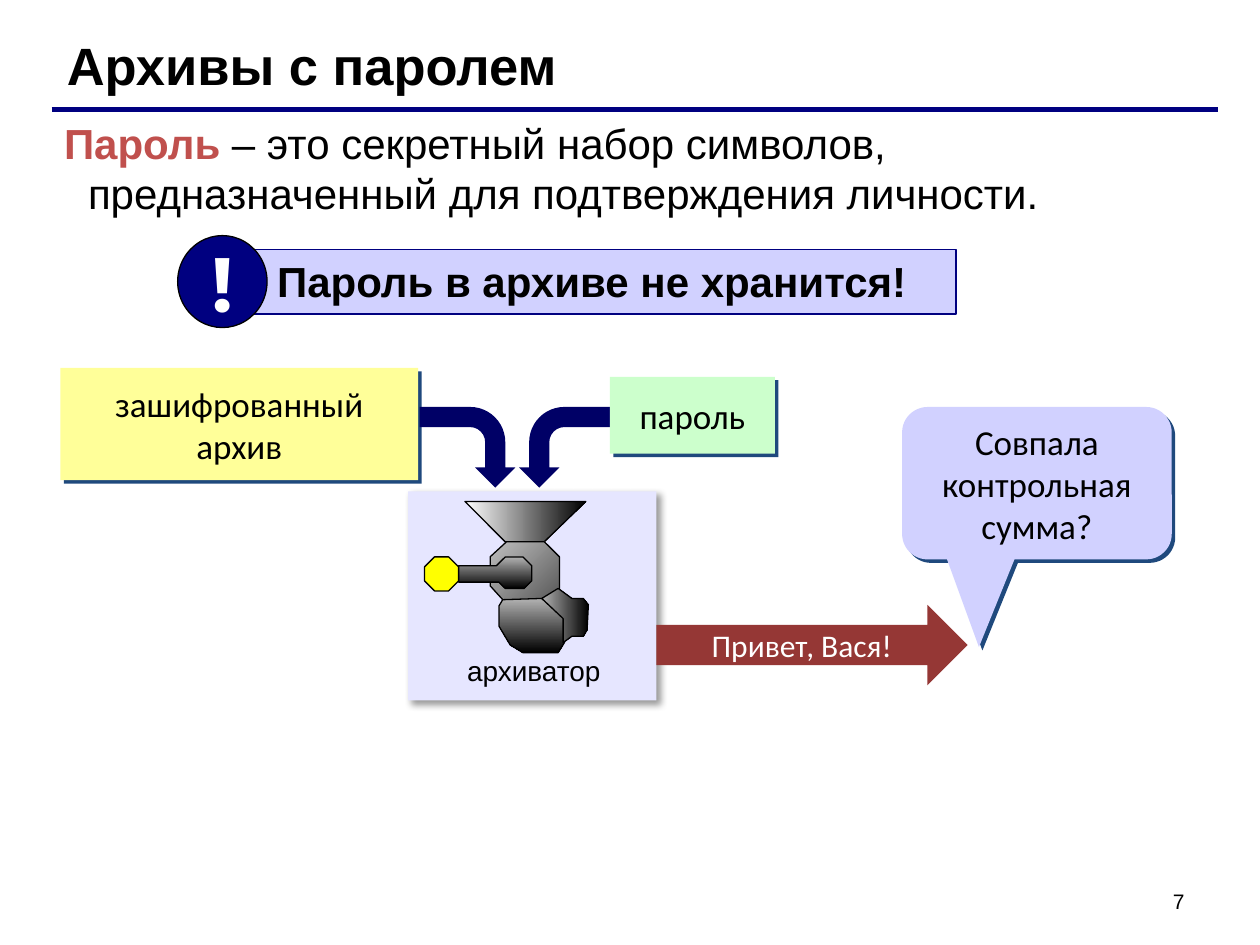
import pptx
import pptx.util
import pptx.dml.color
import pptx.enum.shapes
import pptx.enum.text
import pptx.oxml.ns
import lxml.etree

COLS, ROWS = 1000, 750
WIDE, HIGH = pptx.util.Inches(10), pptx.util.Inches(7.5)
UNIT = WIDE / COLS
KIND = pptx.enum.shapes.MSO_SHAPE
ALIGN = pptx.enum.text.PP_ALIGN
ANCHOR = pptx.enum.text.MSO_ANCHOR
NAVY, BLACK, WHITE, LILAC = "000080", "000000", "FFFFFF", "D1D1FF"
HARD = ("1F497D", 100, 0, 2.8)
SOFT = (BLACK, 40, 4, 3)


def color(text):
    return pptx.dml.color.RGBColor.from_string(text)


def col(num):
    return int(WIDE * num / COLS)


def row(num):
    return int(HIGH * num / ROWS)


def grid(left, top, wide, high):
    return col(left), row(top), col(wide), row(high)


def tag(root, name, **attrs):
    return lxml.etree.SubElement(root, pptx.oxml.ns.qn(name), attrs)


def shade(shape, tone, alpha, blur, dist):
    root = shape._element.spPr.find(pptx.oxml.ns.qn("a:effectLst"))
    outer = tag(root, "a:outerShdw", blurRad=str(int(blur * 12700)),
                dist=str(int(dist * 12700)), dir="2700000", algn="tl", rotWithShape="0")
    tag(tag(outer, "a:srgbClr", val=tone), "a:alpha", val=str(alpha * 1000))


def paint(shape, fill, line=None, width=0.75):
    shape.shadow.inherit = False
    if isinstance(fill, tuple):
        start, end, angle = fill
        shape.fill.gradient()
        shape.fill.gradient_angle = -angle % 360
        for stop, tone in zip(shape.fill.gradient_stops, (start, end)):
            stop.color.rgb = color(tone)
    else:
        shape.fill.solid()
        shape.fill.fore_color.rgb = color(fill)
    if line:
        shape.line.color.rgb = color(line)
        shape.line.width = pptx.util.Pt(width)
    else:
        shape.line.fill.background()


def style(font, size, face="Arial", tone=BLACK, bold=False):
    font.size, font.name, font.bold = pptx.util.Pt(size), face, bold
    font.color.rgb = color(tone)


def write(shape, text, size, face="Arial", tone=BLACK, bold=False,
          align=ALIGN.LEFT, anchor=ANCHOR.TOP, wrap=True):
    frame = shape.text_frame
    frame.text = text
    frame.word_wrap = wrap
    frame.auto_size = pptx.enum.text.MSO_AUTO_SIZE.NONE
    frame.vertical_anchor = anchor
    for para in frame.paragraphs:
        para.alignment = align
        style(para.font, size, face, tone, bold)
    return frame


def center(shape, text, size, face="Calibri", tone=BLACK, bold=False, wrap=True):
    write(shape, text, size, face, tone, bold, ALIGN.CENTER, ANCHOR.MIDDLE, wrap)


def label(slide, place, text, size, **opts):
    return write(slide.shapes.add_textbox(*grid(*place)), text, size, **opts)


def block(slide, kind, place, fill, line=None, width=0.75, shadow=None):
    shape = slide.shapes.add_shape(kind, *grid(*place))
    paint(shape, fill, line, width)
    if shadow:
        shade(shape, *shadow)
    return shape


def part(slide, points, fill):
    form = slide.shapes.build_freeform(*points[0], scale=UNIT)
    form.add_line_segments(points[1:], close=True)
    paint(form.convert_to_shape(), fill, BLACK)


def bend(slide, left, angle, flip=False):
    arrow = block(slide, KIND.BENT_ARROW, (left, 317, 64, 76), "000066")
    arrow.rotation = angle
    if flip:
        arrow._element.spPr.xfrm.set("flipH", "1")


def head(slide):
    rule = slide.shapes.add_connector(pptx.enum.shapes.MSO_CONNECTOR.STRAIGHT,
                                      col(41), row(87), col(967), row(87))
    rule.line.color.rgb = color(NAVY)
    rule.line.width = pptx.util.Pt(3)
    tag(rule._element.spPr, "a:effectLst")
    title = slide.shapes.title
    title.left, title.top, title.width, title.height = grid(43, 21, 890, 60)
    write(title, "Архивы с паролем", 30, bold=True)
    label(slide, (717, 695, 233, 40), "7", 12, align=ALIGN.RIGHT, anchor=ANCHOR.MIDDLE)


def define(slide):
    frame = label(slide, (41, 88, 921, 91), "", 24)
    para = frame.paragraphs[0]
    props = para._p.get_or_add_pPr()
    props.set("marL", str(col(19)))
    props.set("indent", str(-col(19)))
    term = para.add_run()
    term.text = "Пароль"
    style(term.font, 24, tone="C0504D", bold=True)
    para.add_run().text = " – это секретный набор символов, предназначенный для подтверждения личности."


def warn(slide):
    bar = block(slide, KIND.RECTANGLE, (192, 198, 567, 51), LILAC, NAVY, 1)
    write(bar, "Пароль в архиве не хранится!", 24, bold=True).margin_left = col(28)
    mark = block(slide, KIND.OVAL, (141, 187, 71, 73), NAVY, BLACK)
    center(mark, "!", 44, "Montserrat", WHITE, True, False)


def mill(slide):
    block(slide, KIND.RECTANGLE, (324, 390, 197, 166), "E6E6FF", shadow=SOFT)
    part(slide, [(369, 398), (465, 398), (432, 430), (401, 430)], (WHITE, BLACK, 0))
    part(slide, [(402, 430), (432, 430), (444, 442), (444, 467), (429, 476),
                 (399, 476), (389, 465), (389, 442)], ("C0C0C0", "595959", 45))
    part(slide, [(399, 476), (396, 481), (396, 497), (405, 512), (415, 518),
                 (443, 518), (448, 510), (448, 490), (430, 475)], ("B2B2B2", BLACK, 90))
    part(slide, [(447, 510), (454, 505), (463, 505), (466, 500), (467, 480), (463, 475),
                 (454, 475), (443, 467), (430, 475), (447, 491)], ("B2B2B2", BLACK, 0))
    block(slide, KIND.OCTAGON, (337, 442, 27, 27), "FFFF00", BLACK)
    part(slide, [(364, 449), (394, 449), (401, 442), (415, 442), (422, 449),
                 (422, 461), (416, 467), (401, 467), (396, 462), (364, 462)],
         ("B2B2B2", BLACK, 90))
    label(slide, (361, 514, 127, 37), "архиватор", 16, wrap=False)


def flow(slide):
    source = block(slide, KIND.RECTANGLE, (48, 292, 284, 89), "FFFF99", shadow=HARD)
    center(source, "зашифрованный\nархив", 20, wrap=False)
    mill(slide)
    result = block(slide, KIND.RIGHT_ARROW, (521, 480, 247, 64), "953735")
    center(result, "Привет, Вася!", 18, tone=WHITE)
    bend(slide, 339, 90)
    bend(slide, 418, 270, True)
    key = block(slide, KIND.RECTANGLE, (484, 299, 131, 61), "CCFFCC", shadow=HARD)
    center(key, "пароль", 20, wrap=False)
    bubble = block(slide, KIND.ROUNDED_RECTANGULAR_CALLOUT, (716, 323, 214, 121),
                   LILAC, shadow=HARD)
    for spot, value in enumerate((-0.215, 1.075, 0.167)):
        bubble.adjustments[spot] = value
    center(bubble, "Совпала контрольная сумма?", 20)


def main():
    deck = pptx.Presentation()
    deck.slide_width, deck.slide_height = WIDE, HIGH
    slide = deck.slides.add_slide(deck.slide_layouts[5])
    head(slide)
    define(slide)
    warn(slide)
    flow(slide)
    deck.save("out.pptx")


if __name__ == "__main__":
    main()
